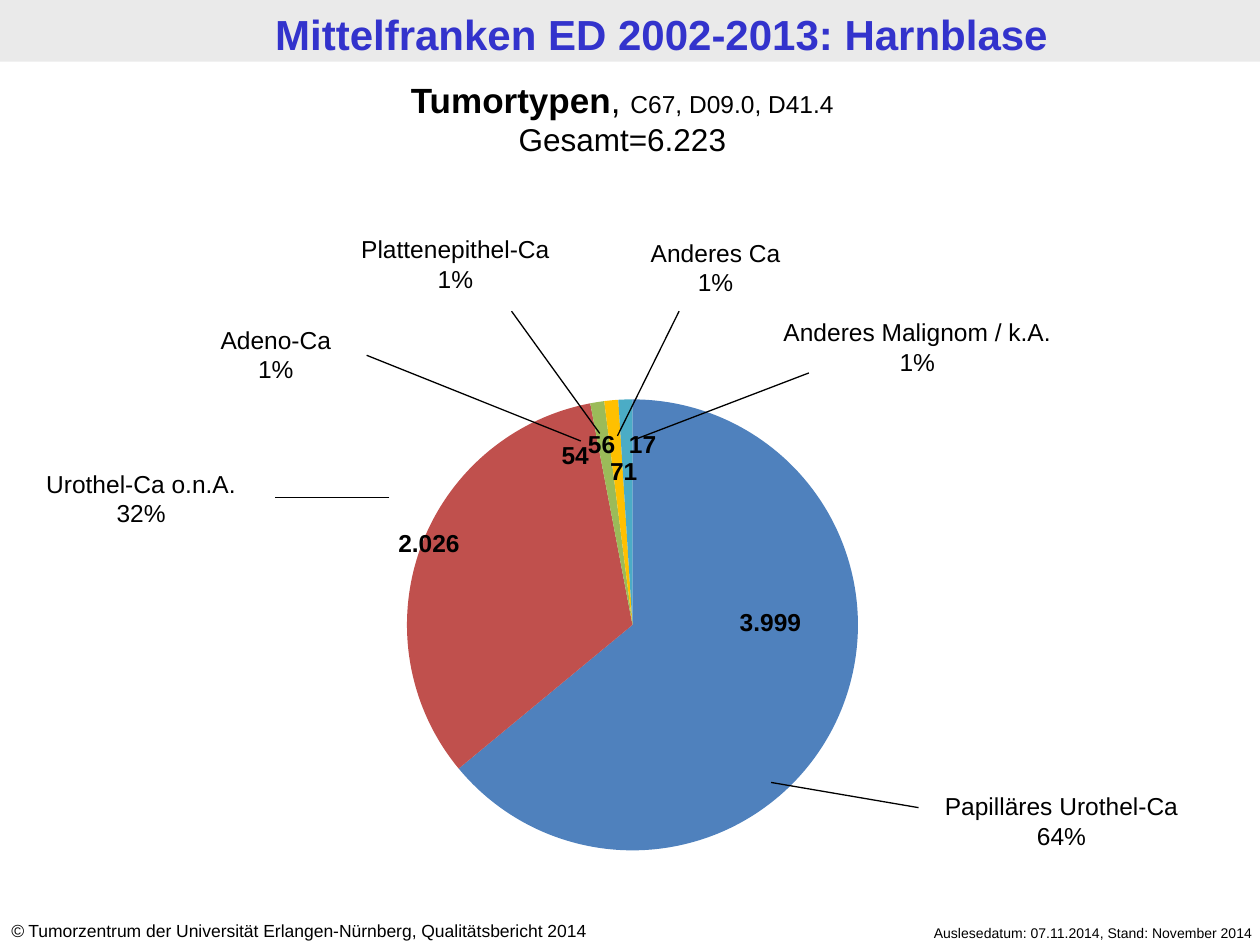
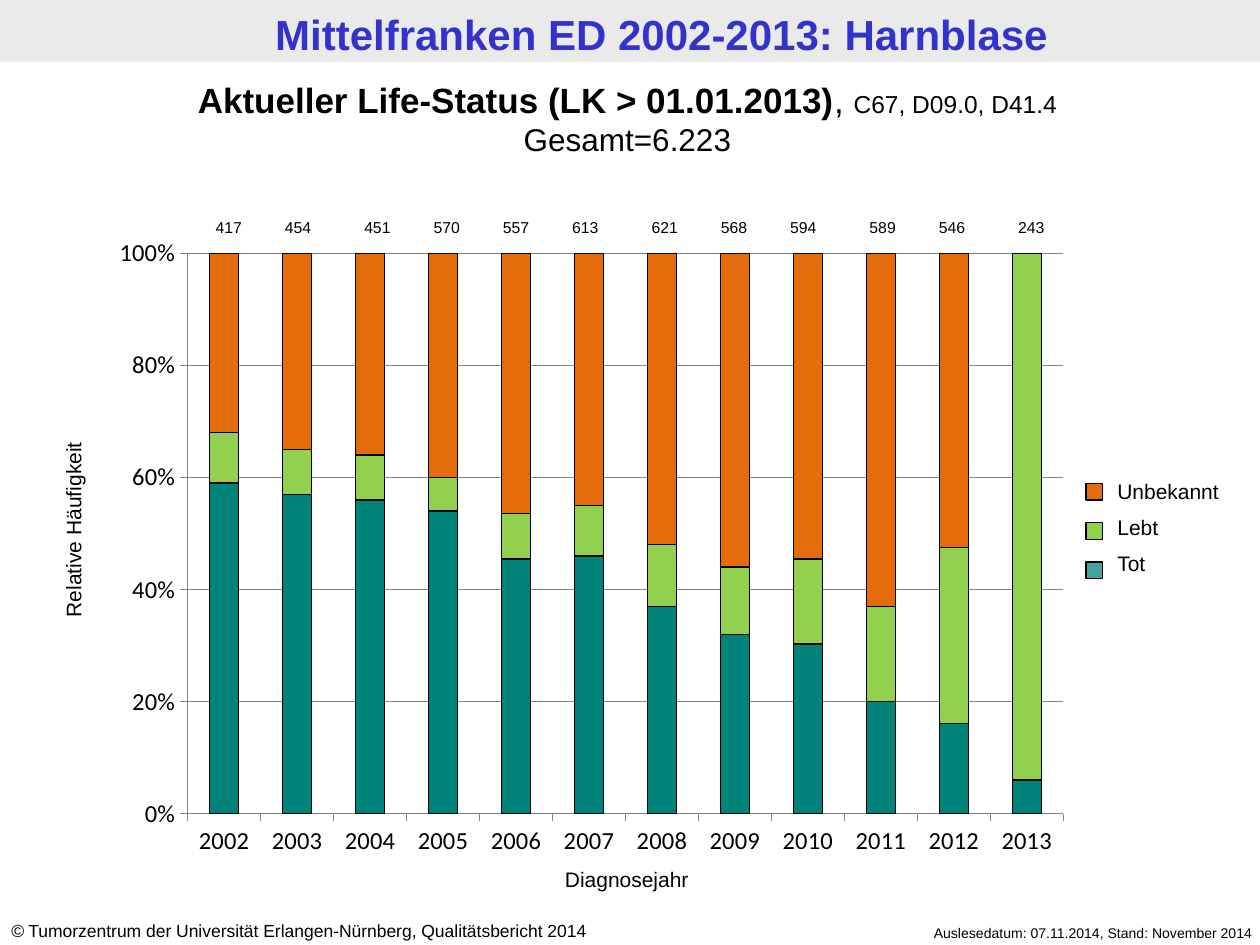
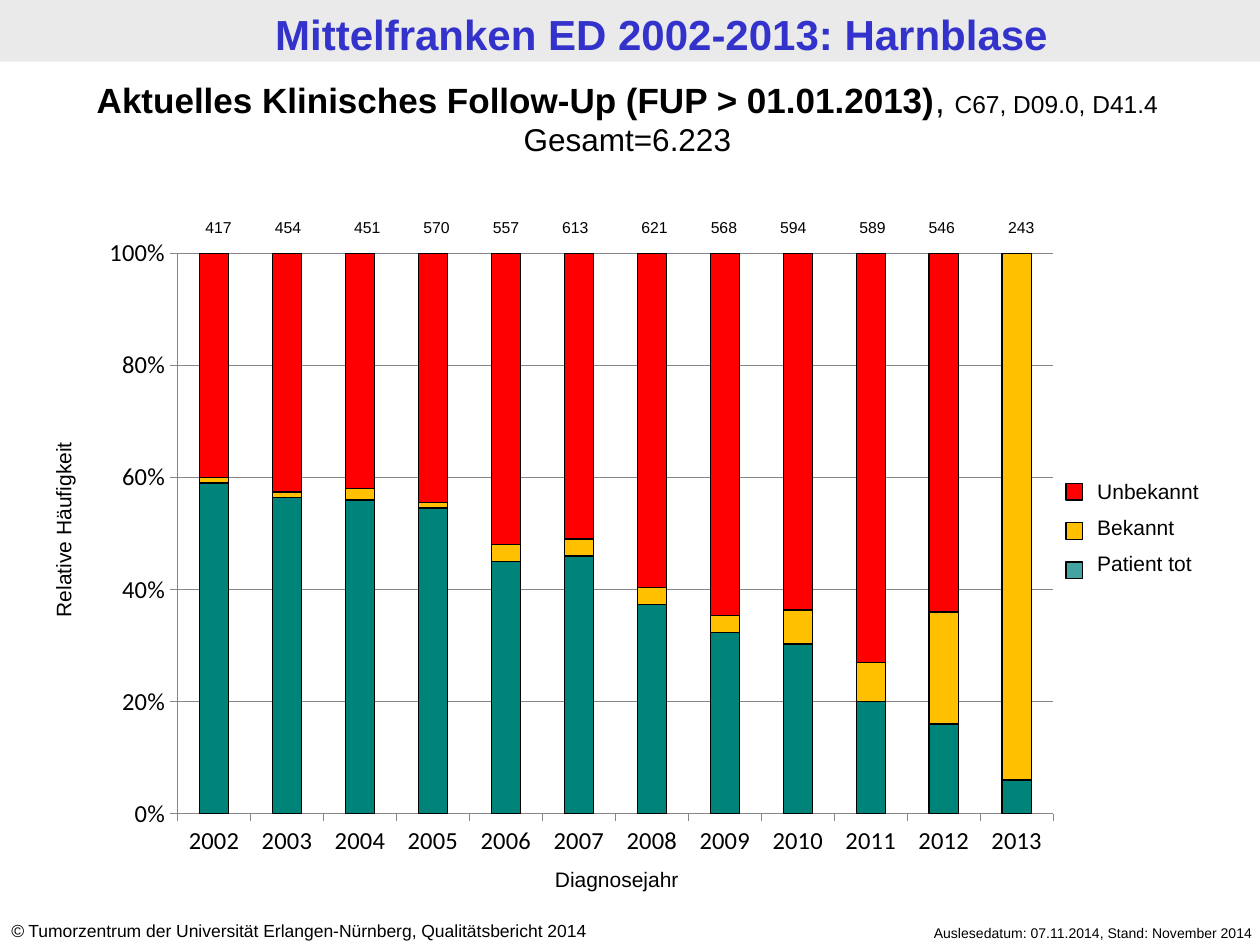
import pptx
import pptx.chart.data
import pptx.dml.color
import pptx.enum.chart
import pptx.enum.shapes
import pptx.enum.text
import pptx.oxml
import pptx.oxml.ns
import pptx.util

Inches, Pt = pptx.util.Inches, pptx.util.Pt
Align = pptx.enum.text.PP_ALIGN
ChartType = pptx.enum.chart.XL_CHART_TYPE

WIDTH, HEIGHT = 10, 7.5
COLORS = {
    "band": "EAEAEA", "title": "3333CC", "ink": "000000", "grid": "868686",
    "dead": "008378", "dead_key": "008380", "alive": "92D050",
    "unknown": "E46C0A", "known": "FFC000", "missing": "FF0000",
    "papillary": "4F81BD", "urothelial": "C0504D", "adeno": "9BBB59",
    "squamous": "FFC000", "other": "4BACC6", "malignant": "F79646",
}
YEARS = [str(year) for year in range(2002, 2014)]
CASES = [417, 454, 451, 570, 557, 613, 621, 568, 594, 589, 546, 243]
CASE_LEFTS = [0.75, 1.3, 1.93, 2.48, 3.03, 3.58, 4.21, 4.76, 5.31, 5.94, 6.49, 7.12]
DEAD_SHARES = [59, 57, 56, 54, 45, 46, 37, 32, 30, 20, 16, 6]


def color(name):
    return pptx.dml.color.RGBColor.from_string(COLORS[name])


def add_span(para, text, size, bold=False, italic=False, ink="ink"):
    span = para.add_run()
    span.text = text
    span.font.name = "Arial"
    span.font.size = Pt(size)
    span.font.bold = bold
    span.font.italic = italic
    span.font.color.rgb = color(ink)


def add_text(page, box, lines, align=Align.CENTER, gap=0):
    """Each line is a list of (text, size, bold, italic) spans."""
    shape = page.shapes.add_textbox(*map(Inches, box))
    frame = shape.text_frame
    frame.word_wrap = True
    frame.auto_size = pptx.enum.text.MSO_AUTO_SIZE.SHAPE_TO_FIT_TEXT
    for index, line in enumerate(lines):
        para = frame.add_paragraph() if index else frame.paragraphs[0]
        para.alignment = align
        if index and gap:
            para.space_before = Pt(gap)
        for span in line:
            add_span(para, *span)
    return shape


def add_rectangle(page, box, fill, outlined=True):
    shape = page.shapes.add_shape(
        pptx.enum.shapes.MSO_SHAPE.RECTANGLE, *map(Inches, box))
    shape.shadow.inherit = False
    shape.fill.solid()
    shape.fill.fore_color.rgb = color(fill)
    if outlined:
        set_line(shape.line)
    else:
        shape.line.fill.background()
    return shape


def set_line(line, ink="ink"):
    line.color.rgb = color(ink)
    line.width = Pt(0.75)


def add_leader(page, start, end):
    leader = page.shapes.add_connector(
        pptx.enum.shapes.MSO_CONNECTOR.STRAIGHT, *map(Inches, start + end))
    set_line(leader.line)
    leader._element.spPr.append(pptx.oxml.parse_xml(
        f'<a:effectLst {pptx.oxml.ns.nsdecls("a")}/>'))


def add_page(deck, heading, heading_box):
    """Start a page with its title band, heading and footers."""
    page = deck.slides.add_slide(deck.slide_layouts[5])
    title = page.shapes.title
    title.left, title.top, title.width, title.height = map(Inches, (0.5, 0.02, 9.5, 0.49))
    title.text_frame.vertical_anchor = pptx.enum.text.MSO_ANCHOR.MIDDLE
    para = title.text_frame.paragraphs[0]
    para.alignment = Align.CENTER
    add_span(para, "Mittelfranken ED 2002-2013: Harnblase", 24, bold=True, ink="title")
    band = add_rectangle(page, (0, 0, WIDTH, 0.49), "band", outlined=False)
    title._element.addprevious(band._element)

    # Footers
    add_text(page, (6.65, 7.29, 3.39, 0.24),
             [[("Auslesedatum: 07.11.2014, Stand: November 2014", 8)]], Align.RIGHT)
    add_text(page, (-0.01, 7.25, 5.24, 0.27), [[
        ("©", 10, False, True),
        (" Tumorzentrum der Universität Erlangen-Nürnberg, Qualitätsbericht 2014", 10),
    ]], Align.LEFT)

    # Heading
    add_text(page, heading_box, [
        [(heading, 20, True), (", ", 20), ("C67, D09.0, D41.4", 14)],
        [("Gesamt=6.223", 18)],
    ])
    return page


def add_chart(page, kind, box, categories, series, plot_box):
    """Add a chart; plot_box is in inches from the corner of its box."""
    data = pptx.chart.data.CategoryChartData()
    data.categories = categories
    for number, values in enumerate(series, 1):
        data.add_series(f"Series {number}", values)
    chart = page.shapes.add_chart(kind, *map(Inches, box), data).chart
    chart.has_legend = False
    chart.has_title = False
    chart.font.name = "Calibri"
    chart.font.size = Pt(18)
    chart.font.color.rgb = color("ink")
    area = chart._chartSpace.chart.plotArea
    for layout in area.findall(pptx.oxml.ns.qn("c:layout")):
        area.remove(layout)
    places = "".join(f'<c:{key} val="{length / whole:.4f}"/>'
                     for key, length, whole in zip("xywh", plot_box, box[2:] * 2))
    area.insert(0, pptx.oxml.parse_xml(
        f'<c:layout {pptx.oxml.ns.nsdecls("c")}><c:manualLayout>'
        '<c:layoutTarget val="inner"/><c:xMode val="edge"/><c:yMode val="edge"/>'
        f'{places}</c:manualLayout></c:layout>'))
    return chart


def add_tumor_pie(page, box):
    counts = [3999, 2026, 54, 56, 71, 17]
    shares = [round(100 * count / sum(counts)) for count in counts]
    chart = add_chart(page, ChartType.PIE, box, list("123456"), [shares],
                      (0.83, 0.14, 3.58, 3.58))
    chart.plots[0].vary_by_categories = True
    fills = ["papillary", "urothelial", "adeno", "squamous", "other", "malignant"]
    for index, fill in enumerate(fills):
        slice_format = chart.plots[0].series[0].points[index].format
        slice_format.fill.solid()
        slice_format.fill.fore_color.rgb = color(fill)

    # Counts, placed from the corner of the pie's box
    left, top = box[:2]
    spots = [(3.3, 1.74, 0.83), (0.59, 1.11, 0.83), (1.89, 0.41, 0.55),
             (2.13, 0.33, 0.49), (2.34, 0.54, 0.42), (2.44, 0.33, 0.52)]
    for count, (across, down, width) in zip(counts, spots):
        text = f"{count:,}".replace(",", ".")
        add_text(page, (left + across, top + down, width, 0.34), [[(text, 14, True)]])

    # Names with shares, and the leaders to their slices
    labels = [
        ("Papilläres Urothel-Ca", "64%", (4.92, 3.2, 2.21), (3.72, 3.18), (4.89, 3.38)),
        ("Urothel-Ca o.n.A.", "32%", (-2.5, 0.64, 2.44), (0.69, 0.92), (-0.22, 0.92)),
        ("Adeno-Ca", "1%", (-1.34, -0.5, 2.26), (2.21, 0.47), (0.51, -0.21)),
        ("Plattenepithel-Ca", "1%", (-0.05, -1.22, 2.53), (2.36, 0.41), (1.66, -0.56)),
        ("Anderes Ca", "1%", (2.23, -1.19, 2.1), (2.5, 0.43), (2.99, -0.56)),
        ("Anderes Malignom / k.A.", "1%", (3.54, -0.56, 2.68), (2.66, 0.45), (4.02, -0.07)),
    ]
    for name, share, (across, down, width), start, end in labels:
        add_text(page, (left + across, top + down, width, 0.57),
                 [[(name, 14)], [(share, 14)]])
        add_leader(page, *((left + x, top + y) for x, y in (start, end)))


def add_year_columns(page, box, series, fills):
    chart = add_chart(page, ChartType.COLUMN_STACKED_100, box, YEARS, series,
                      (0.7, 0.22, 6.95, 4.45))
    plot = chart.plots[0]
    plot.gap_width, plot.overlap = 150, 100
    plot.vary_by_categories = False
    for part, fill in zip(plot.series, fills):
        part.format.fill.solid()
        part.format.fill.fore_color.rgb = color(fill)
        set_line(part.format.line)
    for axis in (chart.category_axis, chart.value_axis):
        axis.major_tick_mark = pptx.enum.chart.XL_TICK_MARK.OUTSIDE
        axis.tick_labels.font.size = Pt(14)
        set_line(axis.format.line, "grid")
    scale = chart.value_axis
    scale.minimum_scale, scale.maximum_scale, scale.major_unit = 0, 1, 0.2
    scale.has_major_gridlines = True
    set_line(scale.major_gridlines.format.line, "grid")
    scale.tick_labels.number_format = "0%"
    scale.tick_labels.number_format_is_linked = False

    # Axis titles and case counts
    left, top = box[:2]
    side = add_text(page, (left - 1.41, top + 2.26, 2.41, 0.31),
                    [[("Relative Häufigkeit", 12)]])
    side.rotation = 270
    add_text(page, (left + 3.06, top + 5.04, 2.25, 0.31), [[("Diagnosejahr", 12)]])
    for cases, across in zip(CASES, CASE_LEFTS):
        add_text(page, (left + across, top - 0.11, 0.55, 0.25), [[(str(cases), 9)]])


def add_key(page, box, names, fills):
    left, top, width, height = box
    add_text(page, (left + 0.15, top, width - 0.15, height),
             [[(name, 12)] for name in names], Align.LEFT, gap=6)
    for row, fill in enumerate(fills):
        swatch = add_rectangle(page, (left, top + 0.09 + 0.31 * row, 0.13, 0.13), fill)
        if fill == "dead_key":
            tint = swatch._element.spPr.find(".//" + pptx.oxml.ns.qn("a:srgbClr"))
            tint.append(pptx.oxml.parse_xml(
                f'<a:alpha {pptx.oxml.ns.nsdecls("a")} val="74000"/>'))


def add_status_page(deck, heading, chart_left, key_box, middle, top, names):
    """Middle and top are (colour, shares) of the parts above the dead."""
    page = add_page(deck, heading, (-0.04, 0.57, 10.04, 0.74))
    add_year_columns(page, (chart_left, 1.79, 7.8, 5.11),
                     [DEAD_SHARES, middle[1], top[1]], ["dead", middle[0], top[0]])
    add_key(page, key_box, names, [top[0], middle[0], "dead_key"])


def main():
    deck = pptx.Presentation()
    deck.slide_width, deck.slide_height = Inches(WIDTH), Inches(HEIGHT)

    page = add_page(deck, "Tumortypen", (0, 0.57, 9.88, 0.74))
    add_tumor_pie(page, (2.4, 3.03, 5.24, 3.86))

    add_status_page(
        deck, "Aktueller Life-Status (LK > 01.01.2013)", 0.79, (8.62, 3.75, 1.38, 0.91),
        ("alive", [9, 8, 8, 6, 8, 9, 11, 12, 15, 17, 31, 94]),
        ("unknown", [32, 35, 36, 40, 46, 45, 52, 56, 54, 63, 52, 0]),
        ["Unbekannt", "Lebt", "Tot"])
    add_status_page(
        deck, "Aktuelles Klinisches Follow-Up (FUP > 01.01.2013)", 0.71,
        (8.46, 3.75, 1.54, 0.91),
        ("known", [1, 1, 2, 1, 3, 3, 3, 3, 6, 7, 20, 94]),
        ("missing", [40, 43, 42, 44, 52, 51, 59, 64, 63, 73, 64, 0]),
        ["Unbekannt", "Bekannt", "Patient tot"])

    deck.save("out.pptx")


if __name__ == "__main__":
    main()
